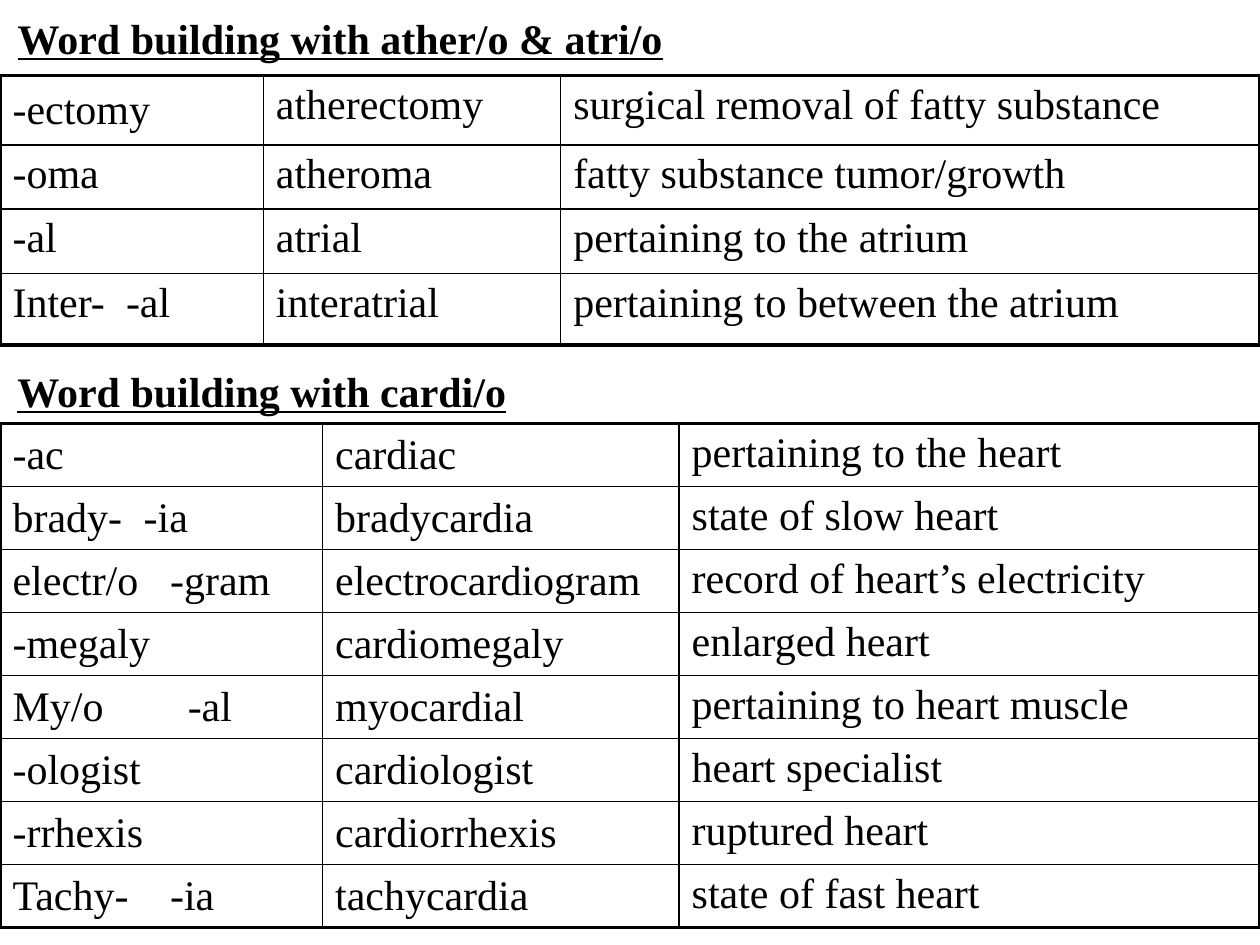
from dataclasses import dataclass

from lxml.etree import SubElement
from pptx import Presentation
from pptx.dml.color import RGBColor
from pptx.enum.text import MSO_ANCHOR as Anchor, MSO_AUTO_SIZE as AutoSize, PP_ALIGN as Align
from pptx.oxml import parse_xml
from pptx.oxml.ns import qn
from pptx.util import Inches, Pt


@dataclass(frozen=True)
class Theme:
    """Colours, type and line widths of the slide."""
    ink: str = "000000"
    font: str = "Times New Roman"
    size: float = 24
    outer: float = 2.25
    inner: float = 1


@dataclass(frozen=True)
class WordRow:
    """Affixes, the built word, its meaning, and the tab stop between two affixes."""
    affixes: str
    word: str
    meaning: str
    tab: float = 0


@dataclass(frozen=True)
class WordTable:
    """A table of built words; centred holds (row, column) cells anchored in the middle."""
    top: float
    columns: tuple[float, ...]
    heights: tuple[float, ...]
    centred: frozenset[tuple[int, int]]
    rows: tuple[WordRow, ...]


THEME = Theme()
WIDTH, HEIGHT = 10, 7.5
HEADING_LEFT, HEADING_HEIGHT = 0.04, 0.5
NAMESPACE = "http://schemas.openxmlformats.org/drawingml/2006/main"

ATRI_TABLE = WordTable(
    0.6, (2.09, 2.36, 5.55), (0.55, 0.51, 0.51, 0.57), frozenset({(0, 0)}),
    (
        WordRow("-ectomy", "atherectomy", "surgical removal of fatty substance"),
        WordRow("-oma", "atheroma", "fatty substance tumor/growth"),
        WordRow("-al", "atrial", "pertaining to the atrium"),
        WordRow("Inter-\t-al", "interatrial", "pertaining to between the atrium", 0.9),
    ),
)
CARDI_ROWS = (
    WordRow("-ac", "cardiac", "pertaining to the heart"),
    WordRow("brady-\t-ia", "bradycardia", "state of slow heart", 1.04),
    WordRow("electr/o\t-gram", "electrocardiogram", "record of heart’s electricity", 1.25),
    WordRow("-megaly", "cardiomegaly", "enlarged heart"),
    WordRow("My/o\t-al", "myocardial", "pertaining to heart muscle", 1.39),
    WordRow("-ologist", "cardiologist", "heart specialist"),
    WordRow("-rrhexis", "cardiorrhexis", "ruptured heart"),
    WordRow("Tachy-\t-ia", "tachycardia", "state of fast heart", 1.25),
)
CARDI_TABLE = WordTable(
    3.36, (2.56, 2.83, 4.61), (0.5,) * len(CARDI_ROWS),
    frozenset((row, column) for row in range(len(CARDI_ROWS)) for column in range(2)),
    CARDI_ROWS,
)


def apply(target, values: dict) -> None:
    """Set each named attribute on the target."""
    for name, value in values.items():
        setattr(target, name, value)


def write(para, text: str, **extra) -> None:
    """Write one left-aligned run in the theme type."""
    para.alignment = Align.LEFT
    span = para.add_run()
    span.text = text
    apply(span.font, {"name": THEME.font, "size": Pt(THEME.size), **extra})
    span.font.color.rgb = RGBColor.from_string(THEME.ink)


def place_heading(box, top: float, text: str) -> None:
    """Position a box and fill it with an underlined bold heading."""
    apply(box, {"left": Inches(HEADING_LEFT), "top": Inches(top),
                "width": Inches(WIDTH - HEADING_LEFT), "height": Inches(HEADING_HEIGHT)})
    apply(box.text_frame, {"word_wrap": True, "auto_size": AutoSize.NONE,
                           "vertical_anchor": Anchor.TOP})
    write(box.text_frame.paragraphs[0], text, bold=True, underline=True)


def set_borders(cell, widths: dict[str, float]) -> None:
    """Draw a solid line of the given width on each side of a cell."""
    properties = cell._tc.get_or_add_tcPr()
    for index, (side, width) in enumerate(widths.items()):
        properties.insert(index, parse_xml(
            f'<a:{side} xmlns:a="{NAMESPACE}" w="{Pt(width)}"><a:solidFill>'
            f'<a:srgbClr val="{THEME.ink}"/></a:solidFill></a:{side}>'))


def set_tab(para, position: float) -> None:
    """Add one left tab stop to a paragraph."""
    stops = SubElement(para._p.get_or_add_pPr(), qn("a:tabLst"))
    SubElement(stops, qn("a:tab"), pos=str(Inches(position)), algn="l")


def draw_table(page, words: WordTable) -> None:
    """Add a word table with a heavy frame and thin inner rules."""
    last_row, last_column = len(words.rows) - 1, len(words.columns) - 1
    table = page.shapes.add_table(
        last_row + 1, last_column + 1, 0, Inches(words.top),
        Inches(WIDTH), Inches(sum(words.heights))).table
    apply(table, {"first_row": False, "horz_banding": False})
    for column, width in zip(table.columns, words.columns):
        column.width = Inches(width)
    for row, entry in enumerate(words.rows):
        table.rows[row].height = Inches(words.heights[row])
        for column, text in enumerate((entry.affixes, entry.word, entry.meaning)):
            cell = table.cell(row, column)
            cell.fill.background()
            centred = (row, column) in words.centred
            cell.vertical_anchor = Anchor.MIDDLE if centred else Anchor.TOP
            para = cell.text_frame.paragraphs[0]
            write(para, text)
            if "\t" in text:
                set_tab(para, entry.tab)
            edges = {"lnL": column == 0, "lnR": column == last_column,
                     "lnT": row == 0, "lnB": row == last_row}
            set_borders(cell, {side: THEME.outer if is_outer else THEME.inner
                               for side, is_outer in edges.items()})


def main() -> None:
    """Build the slide and save the deck."""
    deck = Presentation()
    apply(deck, {"slide_width": Inches(WIDTH), "slide_height": Inches(HEIGHT)})
    page = deck.slides.add_slide(deck.slide_layouts[5])
    place_heading(page.shapes.title, 0.05, "Word building with ather/o & atri/o")
    place_heading(page.shapes.add_textbox(0, 0, 0, 0), 2.85, "Word building with cardi/o")
    for word_table in (ATRI_TABLE, CARDI_TABLE):
        draw_table(page, word_table)
    deck.save("out.pptx")


if __name__ == "__main__":
    main()
